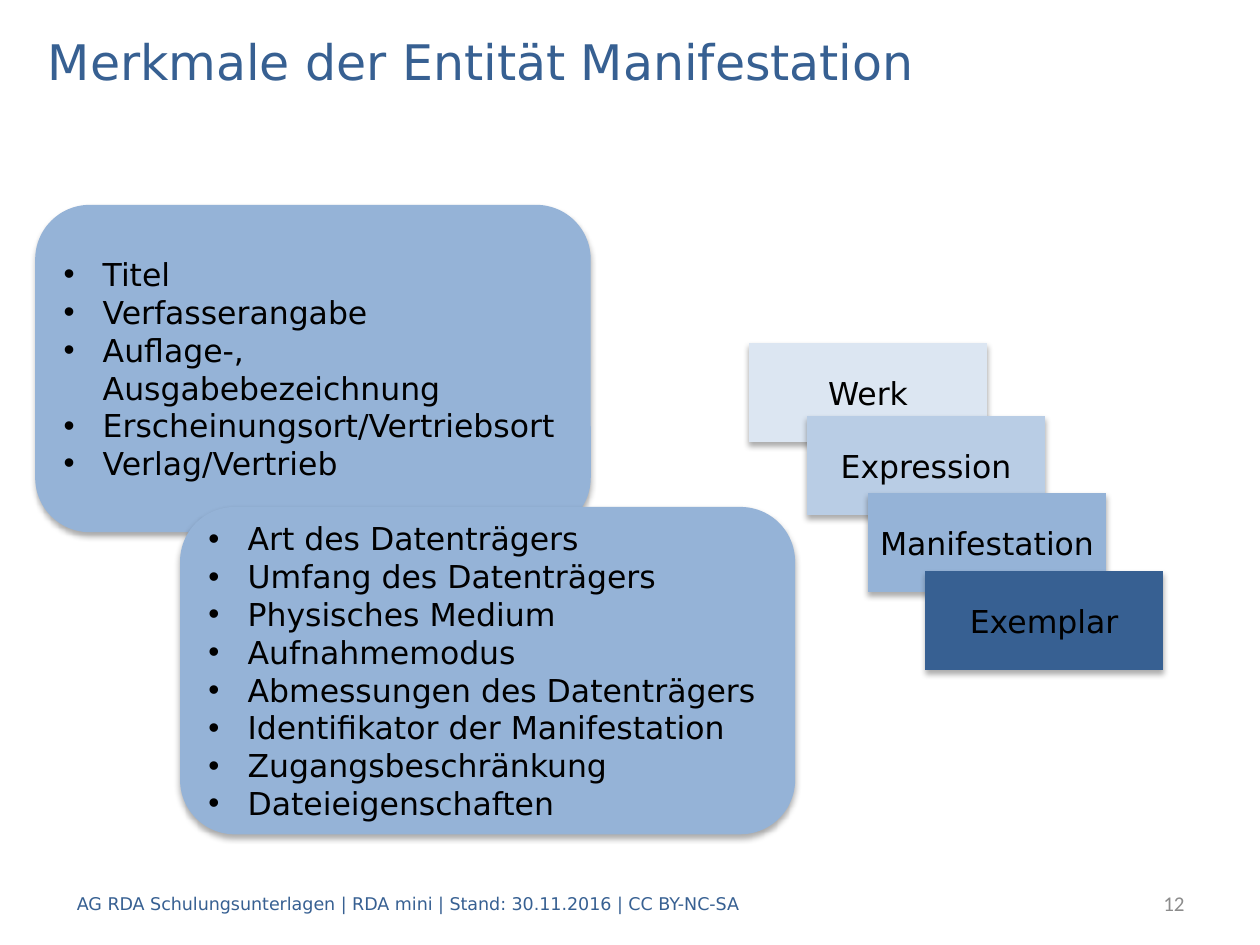
from lxml import etree
from pptx import Presentation
from pptx import util as u
from pptx.dml.color import RGBColor
from pptx.enum import shapes, text
from pptx.oxml import ns

NAVY = RGBColor(0x37, 0x60, 0x92)
BLUE = RGBColor(0x95, 0xB3, 0xD7)
LIGHT = RGBColor(0xB9, 0xCD, 0xE5)
PALE = RGBColor(0xDC, 0xE6, 0xF2)
GREY = RGBColor(0x8C, 0x8C, 0x8C)
BLACK = RGBColor(0, 0, 0)
FONT = "DejaVu Sans"
LEFT, MID, RIGHT = text.PP_ALIGN.LEFT, text.PP_ALIGN.CENTER, text.PP_ALIGN.RIGHT
SHADOW = (
    f'<a:effectLst {ns.nsdecls("a")}>'
    '<a:outerShdw blurRad="44450" dist="27940" dir="5400000" rotWithShape="0">'
    '<a:srgbClr val="000000"><a:alpha val="32000"/></a:srgbClr>'
    '</a:outerShdw></a:effectLst>'
)


def write(frame, lines, size, color=BLACK, align=LEFT, font=FONT, bullet=False):
    frame.vertical_anchor = text.MSO_ANCHOR.MIDDLE
    for i, line in enumerate(lines):
        para = frame.add_paragraph() if i else frame.paragraphs[0]
        para.alignment = align
        if bullet:
            props = para._p.get_or_add_pPr()
            props.set("marL", str(u.Cm(0.79)))
            props.set("indent", str(-u.Cm(0.79)))
            etree.SubElement(props, ns.qn("a:buFont"), typeface="Arial")
            etree.SubElement(props, ns.qn("a:buChar"), char="•")
        run = para.add_run()
        run.text = line
        run.font.size = u.Pt(size)
        run.font.name = font
        run.font.color.rgb = color


def add_box(kind, x, y, w, h, color):
    """Add a borderless filled shape with a soft shadow below it."""
    box = slide.shapes.add_shape(kind, u.Cm(x), u.Cm(y), u.Cm(w), u.Cm(h))
    box.fill.solid()
    box.fill.fore_color.rgb = color
    box.line.fill.background()
    box._element.spPr.append(etree.fromstring(SHADOW))
    return box


deck = Presentation()
deck.slide_width, deck.slide_height = u.Cm(25.4), u.Cm(19.05)
slide = deck.slides.add_slide(deck.slide_layouts[5])

# Title
title = slide.shapes.title
title.left, title.top = u.Cm(0.71), u.Cm(0.51)
title.width, title.height = u.Cm(24), u.Cm(1.42)
title.text_frame.auto_size = text.MSO_AUTO_SIZE.NONE
write(title.text_frame, ["Merkmale der Entität Manifestation"], 28, NAVY)

# Footer and page number
credit = "AG RDA Schulungsunterlagen | RDA mini | Stand: 30.11.2016 | CC BY-NC-SA"
for x, w, line, size, color, align, font in [
    (1.3, 20.4, credit, 10, NAVY, LEFT, FONT),
    (20.09, 4.04, "12", 12, GREY, RIGHT, "Calibri"),
]:
    note = slide.shapes.add_textbox(u.Cm(x), u.Cm(17.7), u.Cm(w), u.Cm(1.02))
    note.text_frame.word_wrap = True
    write(note.text_frame, [line], size, color, align, font)

# Lists of attributes
first = [
    "Titel",
    "Verfasserangabe",
    "Auflage-, Ausgabebezeichnung",
    "Erscheinungsort/Vertriebsort",
    "Verlag/Vertrieb",
]
second = [
    "Art des Datenträgers",
    "Umfang des Datenträgers",
    "Physisches Medium",
    "Aufnahmemodus",
    "Abmessungen des Datenträgers",
    "Identifikator der Manifestation",
    "Zugangsbeschränkung",
    "Dateieigenschaften",
]
for x, y, w, items in [(0.71, 4.13, 11.2, first), (3.63, 10.22, 12.4, second)]:
    box = add_box(shapes.MSO_SHAPE.ROUNDED_RECTANGLE, x, y, w, 6.6, BLUE)
    write(box.text_frame, items, 18, bullet=True)

# Cascade of entities
for x, y, name, color in [
    (15.1, 6.92, "Werk", PALE),
    (16.27, 8.39, "Expression", LIGHT),
    (17.5, 9.94, "Manifestation", BLUE),
    (18.65, 11.51, "Exemplar", NAVY),
]:
    box = add_box(shapes.MSO_SHAPE.FLOWCHART_PROCESS, x, y, 4.8, 2, color)
    box.text_frame.word_wrap = False
    write(box.text_frame, [name], 18, align=MID)

deck.save("out.pptx")
